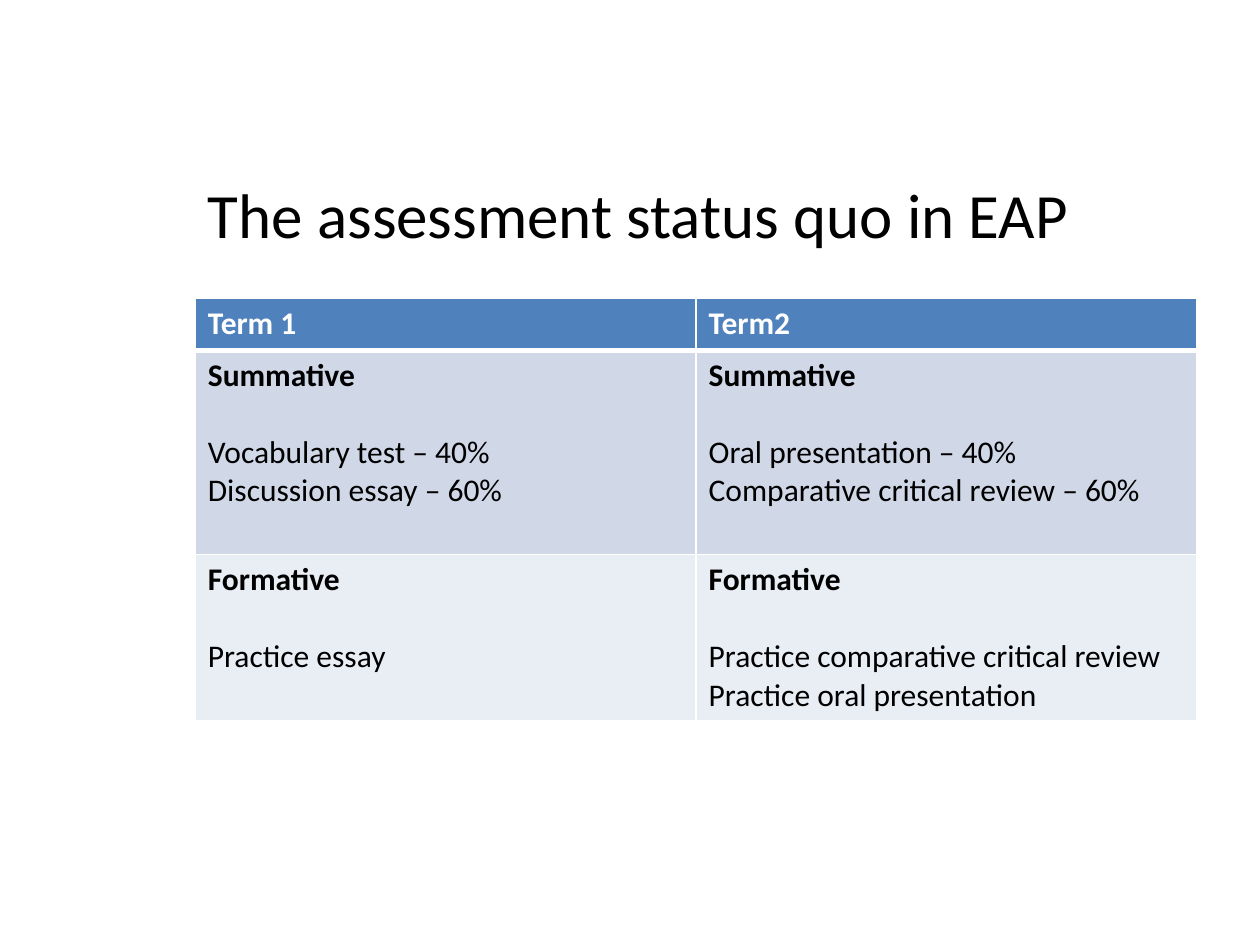
from dataclasses import dataclass

from lxml import etree
from pptx import Presentation
from pptx import util as u
from pptx.dml.color import RGBColor
from pptx.enum import text
from pptx.oxml.ns import qn


@dataclass(frozen=True)
class Theme:
    font: str = "Calibri"
    title_size: int = 36
    table_size: int = 18
    line_pitch: int = 22
    ink: str = "000000"
    white: str = "FFFFFF"
    header: str = "4F81BD"
    bands: tuple = ("D0D8E8", "E9EDF4")
    border: int = 1
    header_border: int = 3


THEME = Theme()
LEFT, WIDTH = 1.55, 7.95
ROW_HEIGHTS = (0.41, 1.62, 1.31)
TERMS = ("Term 1", "Term2")
ASSESSMENTS = (
    ("Summative", (
        ("Vocabulary test – 40%", "Discussion essay – 60%"),
        ("Oral presentation – 40%", "Comparative critical review – 60%"),
    )),
    ("Formative", (
        ("Practice essay",),
        ("Practice comparative critical review", "Practice oral presentation"),
    )),
)


def write(paragraph, content, size=THEME.table_size, color=THEME.ink, bold=False, before=0):
    paragraph.alignment = text.PP_ALIGN.LEFT
    if before:
        paragraph.space_before = u.Pt(before)
    run = paragraph.add_run()
    run.text = content
    run.font.name = THEME.font
    run.font.size = u.Pt(size)
    run.font.bold = bold
    run.font.color.rgb = RGBColor.from_string(color)


def style_cell(cell, fill, top=THEME.border, bottom=THEME.border):
    properties = cell._tc.get_or_add_tcPr()
    widths = {"lnL": THEME.border, "lnR": THEME.border, "lnT": top, "lnB": bottom}
    for tag, width in widths.items():
        line = etree.SubElement(properties, qn(f"a:{tag}"), w=str(u.Pt(width)))
        solid = etree.SubElement(line, qn("a:solidFill"))
        etree.SubElement(solid, qn("a:srgbClr"), val=THEME.white)
    cell.fill.solid()
    cell.fill.fore_color.rgb = RGBColor.from_string(fill)


def add_title(slide, content):
    title = slide.shapes.title
    title.left, title.top = u.Inches(LEFT), u.Inches(1.07)
    title.width, title.height = u.Inches(WIDTH), u.Inches(1.25)
    title.text_frame.vertical_anchor = text.MSO_ANCHOR.MIDDLE
    write(title.text_frame.paragraphs[0], content, size=THEME.title_size)


def fill_assessment(cell, heading, items):
    frame = cell.text_frame
    write(frame.paragraphs[0], heading, bold=True)
    for index, item in enumerate(items):
        write(frame.add_paragraph(), item, before=0 if index else THEME.line_pitch)


def add_assessment_table(slide):
    table = slide.shapes.add_table(
        len(ROW_HEIGHTS), len(TERMS), u.Inches(LEFT), u.Inches(2.37),
        u.Inches(WIDTH), u.Inches(sum(ROW_HEIGHTS))).table
    for row, height in zip(table.rows, ROW_HEIGHTS):
        row.height = u.Inches(height)
    for column, term in enumerate(TERMS):
        cell = table.cell(0, column)
        style_cell(cell, THEME.header, bottom=THEME.header_border)
        write(cell.text_frame.paragraphs[0], term, color=THEME.white, bold=True)
    for row, ((heading, terms), band) in enumerate(zip(ASSESSMENTS, THEME.bands), 1):
        top = THEME.header_border if row == 1 else THEME.border
        for column, items in enumerate(terms):
            cell = table.cell(row, column)
            style_cell(cell, band, top=top)
            fill_assessment(cell, heading, items)


def main():
    presentation = Presentation()
    presentation.slide_width, presentation.slide_height = u.Inches(10), u.Inches(7.5)
    slide = presentation.slides.add_slide(presentation.slide_layouts[5])
    add_title(slide, "The assessment status quo in EAP")
    add_assessment_table(slide)
    presentation.save("out.pptx")


if __name__ == "__main__":
    main()
